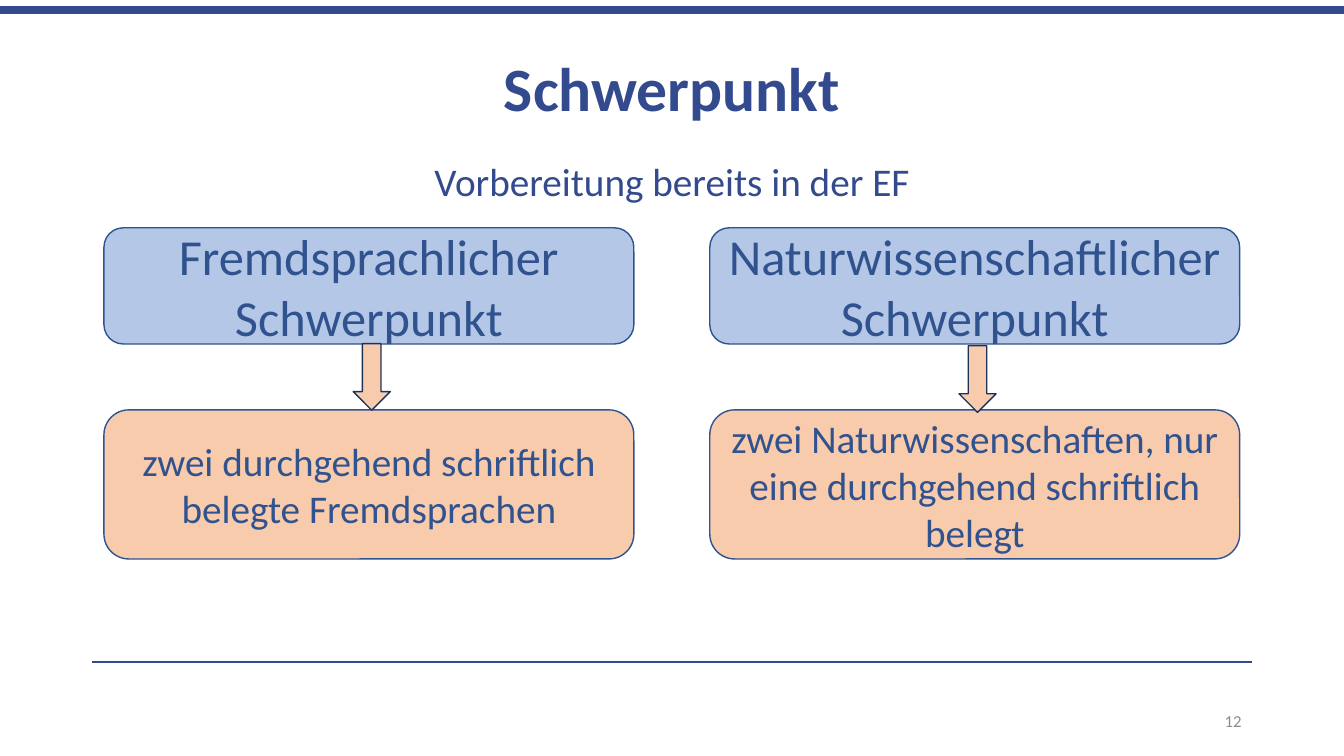
import pptx
import pptx.util
import pptx.dml.color
import pptx.enum.shapes
import pptx.enum.text
import pptx.oxml.ns
from lxml import etree

Pt = pptx.util.Pt
Shape = pptx.enum.shapes.MSO_SHAPE
Align = pptx.enum.text.PP_ALIGN
Anchor = pptx.enum.text.MSO_ANCHOR

COLORS = {
    "navy": "334A8E",
    "blue": "30528E",
    "dark": "1E3256",
    "sky": "B4C7E7",
    "peach": "F8CBAD",
    "gray": "8C8C8C",
}


def color(name):
    return pptx.dml.color.RGBColor.from_string(COLORS[name])


class Deck:
    font = "Calibri"

    def __init__(self, width, height):
        self.prs = pptx.Presentation()
        self.prs.slide_width, self.prs.slide_height = Pt(width), Pt(height)
        self.slide = self.prs.slides.add_slide(self.prs.slide_layouts[6])

    def label(self, item, text, size, ink, bold=False, align=Align.CENTER,
              anchor=Anchor.MIDDLE, spacing=1.0):
        """Fill a shape or box with one styled paragraph."""
        frame = item.text_frame
        frame.word_wrap = True
        frame.vertical_anchor = anchor
        para = frame.paragraphs[0]
        para.text = text
        para.alignment = align
        para.line_spacing = spacing
        style = {"name": self.font, "size": Pt(size), "bold": bold}
        for key, value in style.items():
            setattr(para.font, key, value)
        para.font.color.rgb = color(ink)

    def text(self, box, text, size, ink, **style):
        item = self.slide.shapes.add_textbox(*map(Pt, box))
        self.label(item, text, size, ink, **style)

    def shape(self, kind, box, fill, line):
        item = self.slide.shapes.add_shape(kind, *map(Pt, box))
        item.shadow.inherit = False
        item.fill.solid()
        item.fill.fore_color.rgb = color(fill)
        item.line.color.rgb = color(line)
        item.line.width = Pt(1)
        return item

    def card(self, box, fill, text, size):
        item = self.shape(Shape.ROUNDED_RECTANGLE, box, fill, "blue")
        self.label(item, text, size, "blue")

    def rule(self, left, right, top, width):
        """Draw a horizontal line."""
        line = self.slide.shapes.add_connector(
            pptx.enum.shapes.MSO_CONNECTOR.STRAIGHT,
            Pt(left), Pt(top), Pt(right), Pt(top))
        line.line.color.rgb = color("navy")
        line.line.width = Pt(width)
        props = line._element.spPr
        etree.SubElement(props, pptx.oxml.ns.qn("a:effectLst"))


def main():
    deck = Deck(960, 540)
    deck.rule(0, 960, 7.2, 6)
    deck.rule(66, 894, 473, 1)
    deck.text((66, 29, 828, 72.5), "Schwerpunkt", 44, "navy",
              bold=True, spacing=0.9)
    deck.text((66, 112.5, 828, 360), "Vorbereitung bereits in der EF", 28,
              "navy", anchor=Anchor.TOP, spacing=0.9)
    deck.text((678, 500.5, 216, 28.75), "12", 12, "gray", align=Align.RIGHT)

    columns = [
        (74.25, 245.5, "Fremdsprachlicher Schwerpunkt",
         "zwei durchgehend schriftlich belegte Fremdsprachen"),
        (507, 247, "Naturwissenschaftlicher Schwerpunkt",
         "zwei Naturwissenschaften, nur eine durchgehend schriftlich belegt"),
    ]
    wide = 378.5
    for left, top, focus, need in columns:
        deck.card((left, 162.75, wide, 83), "sky", focus, 36)
        deck.card((left, 292.75, wide, 106.5), "peach", need, 28)
        deck.shape(Shape.DOWN_ARROW, (left + 178, top, 26.5, 47.5),
                   "peach", "dark")
    deck.prs.save("out.pptx")


if __name__ == "__main__":
    main()
